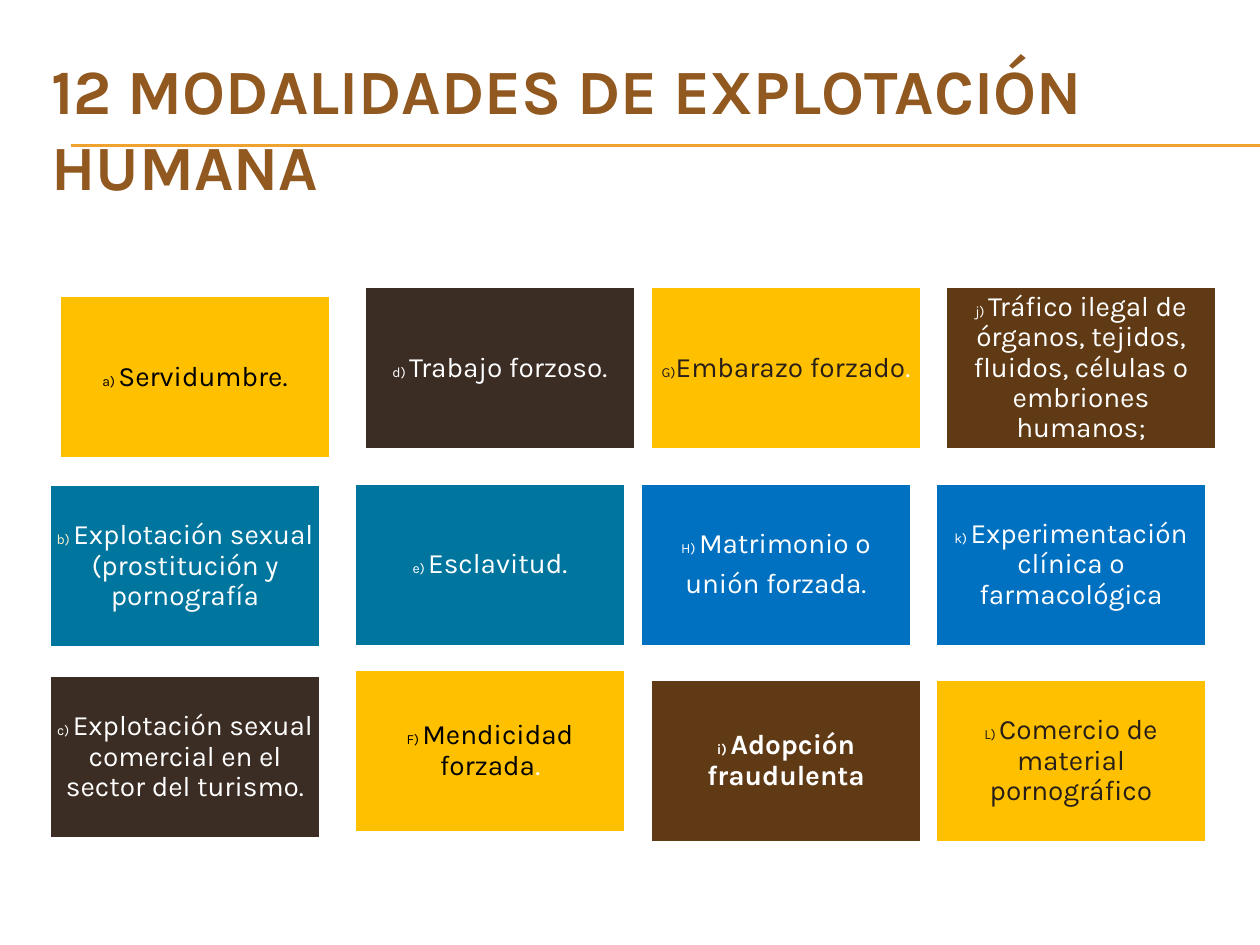
from itertools import product

from lxml.etree import SubElement
from pptx import Presentation
from pptx.dml.color import RGBColor
from pptx.enum.shapes import MSO_CONNECTOR, MSO_SHAPE
from pptx.enum.text import MSO_ANCHOR, PP_ALIGN
from pptx.oxml.ns import qn
from pptx.util import Pt

PX = 914400 // 126  # EMU per pixel

WHITE = RGBColor(0xFF, 0xFF, 0xFF)
BLACK = RGBColor(0x00, 0x00, 0x00)
CREAM = RGBColor(0xFB, 0xEE, 0xC9)
DARK = RGBColor(0x27, 0x1E, 0x18)
TITLE_BROWN = RGBColor(0x91, 0x58, 0x1F)
RULE_ORANGE = RGBColor(0xF0, 0xA2, 0x2E)
YELLOW = RGBColor(0xFF, 0xC0, 0x00)
COFFEE = RGBColor(0x3B, 0x2C, 0x24)
BROWN = RGBColor(0x60, 0x3A, 0x14)
TEAL = RGBColor(0x00, 0x75, 0x9E)
BLUE = RGBColor(0x00, 0x70, 0xC0)

FONT = "Karla"
CARD_SIZE = (272, 164)
COLUMN_LEFTS = (49, 354, 640, 935)
ROW_TOPS = (286, 483, 679)

# Column by column: fill, text colour, letter, lines, offset from the grid, extras
CARDS = (
    (YELLOW, BLACK, "a) ", ["Servidumbre."], (10, 9), {}),
    (TEAL, WHITE, "b) ", ["Explotación sexual (prostitución y pornografía"], (0, 1),
     {"letter_color": CREAM}),
    (COFFEE, WHITE, "c) ", ["Explotación sexual comercial en el sector del turismo."],
     (0, -4), {}),
    (COFFEE, WHITE, "d) ", ["Trabajo forzoso."], (10, 0), {}),
    (TEAL, WHITE, "e) ", ["Esclavitud."], (0, 0), {}),
    (YELLOW, BLACK, "F) ", ["Mendicidad forzada"], (0, -10), {"ending": "."}),
    (YELLOW, DARK, "G)", ["Embarazo forzado"], (10, 0), {"ending": "."}),
    (BLUE, WHITE, "H) ", ["Matrimonio o", "unión forzada."], (0, 0), {}),
    (BROWN, WHITE, "i) ", ["Adopción fraudulenta"], (10, 0), {"bold": True}),
    (BROWN, WHITE, "j) ",
     ["Tráfico ilegal de órganos, tejidos, fluidos, células o embriones humanos;"],
     (10, 0), {}),
    (BLUE, WHITE, "k) ", ["Experimentación clínica o farmacológica"], (0, 0), {}),
    (YELLOW, DARK, "L) ", ["Comercio de material pornográfico"], (0, 0), {}),
)


def apply_format(target, values):
    for name, value in values.items():
        setattr(target, name, value)


def add_run(paragraph, text, size, color, bold=False):
    run = paragraph.add_run()
    run.text = text
    apply_format(run.font, {"name": FONT, "size": Pt(size), "bold": bold})
    run.font.color.rgb = color


def add_rules(slide, left, top, width):
    for y in (top, top + 1):
        rule = slide.shapes.add_connector(
            MSO_CONNECTOR.STRAIGHT, left * PX, y * PX, (left + width) * PX, y * PX)
        rule.line.color.rgb = RULE_ORANGE
        rule.line.width = Pt(0.75)
        SubElement(rule._element.spPr, qn("a:effectLst"))


def add_title(slide, left, top, width, height):
    title = slide.shapes.add_textbox(left * PX, top * PX, width * PX, height * PX)
    frame = title.text_frame
    apply_format(frame, {"word_wrap": True, "vertical_anchor": MSO_ANCHOR.MIDDLE})
    add_run(frame.paragraphs[0], "12 MODALIDADES DE EXPLOTACIÓN HUMANA",
            36, TITLE_BROWN, True)


def add_card(slide, left, top, width, height, fill, color, letter, lines,
             letter_color=None, ending="", bold=False):
    card = slide.shapes.add_shape(
        MSO_SHAPE.RECTANGLE, left * PX, top * PX, width * PX, height * PX)
    card.shadow.inherit = False
    card.fill.solid()
    card.fill.fore_color.rgb = fill
    card.line.color.rgb = WHITE
    card.line.width = Pt(2)

    frame = card.text_frame
    margins = {f"margin_{side}": 4 * PX for side in ("left", "top", "right", "bottom")}
    apply_format(frame, {"word_wrap": True, "vertical_anchor": MSO_ANCHOR.MIDDLE, **margins})
    for index, line in enumerate(lines):
        paragraph = frame.add_paragraph() if index else frame.paragraphs[0]
        apply_format(paragraph, {"alignment": PP_ALIGN.CENTER, "line_spacing": 0.9,
                                 "space_after": Pt(5.6)})
        if index == 0:
            add_run(paragraph, letter, 8, letter_color or color, bold)
        add_run(paragraph, line, 16, color, bold)
    if ending:
        add_run(paragraph, ending, 16, WHITE, bold)


def add_card_grid(slide):
    for (left, top), card in zip(product(COLUMN_LEFTS, ROW_TOPS), CARDS):
        fill, color, letter, lines, (dx, dy), extras = card
        add_card(slide, left + dx, top + dy, *CARD_SIZE,
                 fill, color, letter, lines, **extras)


def main():
    presentation = Presentation()
    apply_format(presentation, {"slide_width": 1260 * PX, "slide_height": 945 * PX})
    slide = presentation.slides.add_slide(presentation.slide_layouts[6])
    add_rules(slide, 71, 145, 1189)
    add_title(slide, 39, 38, 1182, 179)
    add_card_grid(slide)
    presentation.save("out.pptx")


if __name__ == "__main__":
    main()
